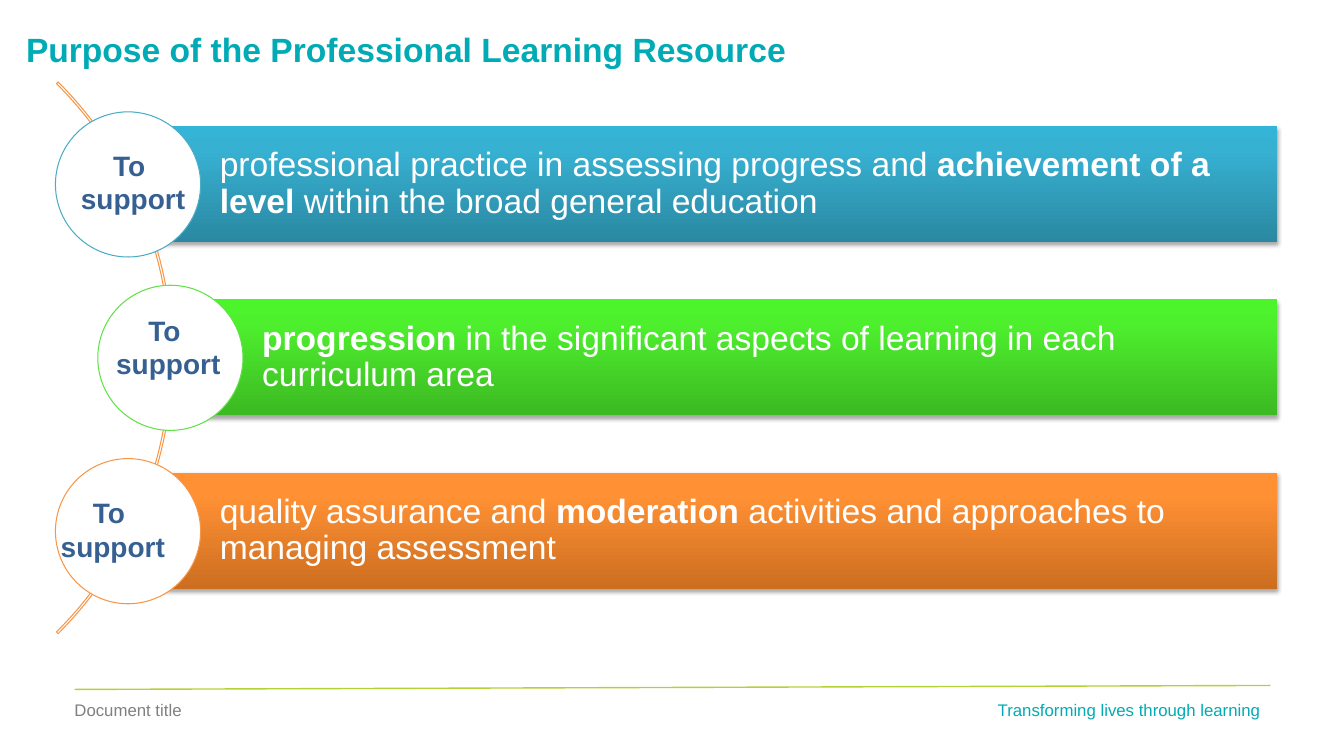
from copy import deepcopy

from lxml import etree
from pptx import Presentation
from pptx.dml.color import RGBColor
from pptx.enum.shapes import MSO_CONNECTOR, MSO_SHAPE
from pptx.enum.text import MSO_ANCHOR, MSO_AUTO_SIZE, PP_ALIGN
from pptx.oxml.ns import qn
from pptx.util import Inches, Pt

RECT, OVAL, ARC = MSO_SHAPE.RECTANGLE, MSO_SHAPE.OVAL, MSO_SHAPE.BLOCK_ARC
LEFT, MID, RIGHT = PP_ALIGN.LEFT, PP_ALIGN.CENTER, PP_ALIGN.RIGHT
TOP, HALF = MSO_ANCHOR.TOP, MSO_ANCHOR.MIDDLE
GROW, FIXED = MSO_AUTO_SIZE.SHAPE_TO_FIT_TEXT, MSO_AUTO_SIZE.NONE
LINE = MSO_CONNECTOR.STRAIGHT

COLORS = {
    "teal": "00ABB5", "grey": "808080", "lime": "B3D236", "navy": "376092",
    "white": "FFFFFF", "black": "000000",
    "blue": "4BACC6", "green": "60E146", "orange": "F79646",
}
FADES = {
    "blue": ("2A88A2", "37B1D2", "34B4D6"),
    "green": ("3CB923", "4EF02E", "4CF52A"),
    "orange": ("CC6E20", "FF9034", "FF9136"),
}
ROWS = [
    ("blue", 0, (0.43, 1.42),
     [("professional practice in assessing progress and ", False),
      ("achievement of a level ", True),
      ("within the broad general education", False)]),
    ("green", 0.42, (0.78, 3.06),
     [("progression", True),
      (" in the significant aspects of learning in each curriculum area", False)]),
    ("orange", 0, (0.23, 4.87),
     [("quality assurance and ", False),
      ("moderation", True),
      (" activities and approaches to managing assessment", False)]),
]
FIRST, PITCH = 1.25, 1.72
BAR_LEFT, BAR_RIGHT, BAR_HIGH = 1.27, 12.67, 1.15
DISC_LEFT, DISC_SIZE, DISC_RISE = 0.55, 1.44, 0.14


def rgb(value):
    return RGBColor.from_string(COLORS.get(value, value))


def apply(item, values):
    for name, value in values.items():
        setattr(item, name, value)


class Deck:
    def __init__(self):
        self.file = Presentation()
        apply(self.file, {"slide_width": Inches(13.33), "slide_height": Inches(7.5)})
        self.slide = self.file.slides.add_slide(self.file.slide_layouts[6])
        self.shapes = self.slide.shapes
        self.font = "Arial"

    def words(self, frame, paras, size, color, align=LEFT, space=1.0):
        for spot, runs in enumerate(paras):
            para = frame.add_paragraph() if spot else frame.paragraphs[0]
            apply(para, {"alignment": align, "line_spacing": space})
            for part, bold in runs:
                run = para.add_run()
                run.text = part
                apply(run.font, {"name": self.font, "size": Pt(size), "bold": bold})
                run.font.color.rgb = rgb(color)

    def text(self, box, paras, size, color, align=LEFT, anchor=TOP, fit=GROW):
        frame = self.shapes.add_textbox(*map(Inches, box)).text_frame
        apply(frame, {"word_wrap": True, "auto_size": fit, "vertical_anchor": anchor})
        self.words(frame, paras, size, color, align)

    def shape(self, kind, box, fill=None, line=None):
        item = self.shapes.add_shape(kind, *map(Inches, box))
        item.shadow.inherit = False
        if fill:
            item.fill.solid()
            item.fill.fore_color.rgb = rgb(fill)
        else:
            item.fill.background()
        if line:
            item.line.color.rgb = rgb(line)
            item.line.width = Pt(0.75)
        else:
            item.line.fill.background()
        return item

    def fade(self, item, colors):
        item.fill.gradient()
        item.fill.gradient_angle = 90
        stops = item._element.spPr.find(".//" + qn("a:gsLst"))
        stops.append(deepcopy(stops[-1]))
        for stop, place, color in zip(item.fill.gradient_stops, (0, 0.8, 1), colors):
            stop.color.rgb = rgb(color)
            stop.position = place

    def shade(self, item):
        effects = item._element.spPr.find(qn("a:effectLst"))
        cast = etree.SubElement(
            effects, qn("a:outerShdw"), blurRad=str(Pt(3.1)), dist=str(Pt(1.8)),
            dir="5400000", rotWithShape="0")
        tint = etree.SubElement(cast, qn("a:srgbClr"), val=COLORS["black"])
        etree.SubElement(tint, qn("a:alpha"), val="35000")

    def bar(self, box, colors, runs):
        item = self.shape(RECT, box)
        self.fade(item, colors)
        self.shade(item)
        edge = Inches(0.07)
        apply(item.text_frame, {
            "word_wrap": True, "vertical_anchor": HALF, "margin_left": Inches(0.91),
            "margin_right": edge, "margin_top": edge, "margin_bottom": edge})
        self.words(item.text_frame, [runs], 24, "white", space=0.9)

    def arc(self, box, color, turns):
        item = self.shape(ARC, box, line=color)
        for spot, turn in enumerate(turns):
            item.adjustments[spot] = turn

    def rule(self, ends, color):
        item = self.shapes.add_connector(LINE, *map(Inches, ends))
        item.line.color.rgb = rgb(color)
        item.line.width = Pt(1)
        etree.SubElement(item._element.spPr, qn("a:effectLst"))


def main():
    deck = Deck()
    deck.text((7.66, 6.89, 4.94, 0.3), [[("Transforming lives through learning", False)]],
              12, "teal", RIGHT)
    deck.rule((0.74, 6.84, 12.6, 6.8), "lime")
    deck.text((0.64, 6.89, 4.94, 0.3), [[("Document title", False)]], 12, "grey")
    deck.text((0.16, 0.13, 12, 0.71),
              [[("Purpose of the Professional Learning Resource", True)]],
              24, "teal", anchor=HALF, fit=FIXED)
    deck.arc((-6.03, -0.32, 7.74, 7.74), "orange", (189, 27, 0.003))
    for spot, (color, shift, label, runs) in enumerate(ROWS):
        top = FIRST + spot * PITCH
        left = BAR_LEFT + shift
        deck.bar((left, top, BAR_RIGHT - left, BAR_HIGH), FADES[color], runs)
        deck.shape(OVAL, (DISC_LEFT + shift, top - DISC_RISE, DISC_SIZE, DISC_SIZE),
                   "white", color)
        deck.text((*label, 1.78, 0.77), [[("To ", True)], [("support", True)]],
                  20, "navy", MID)
    deck.file.save("out.pptx")


if __name__ == "__main__":
    main()
